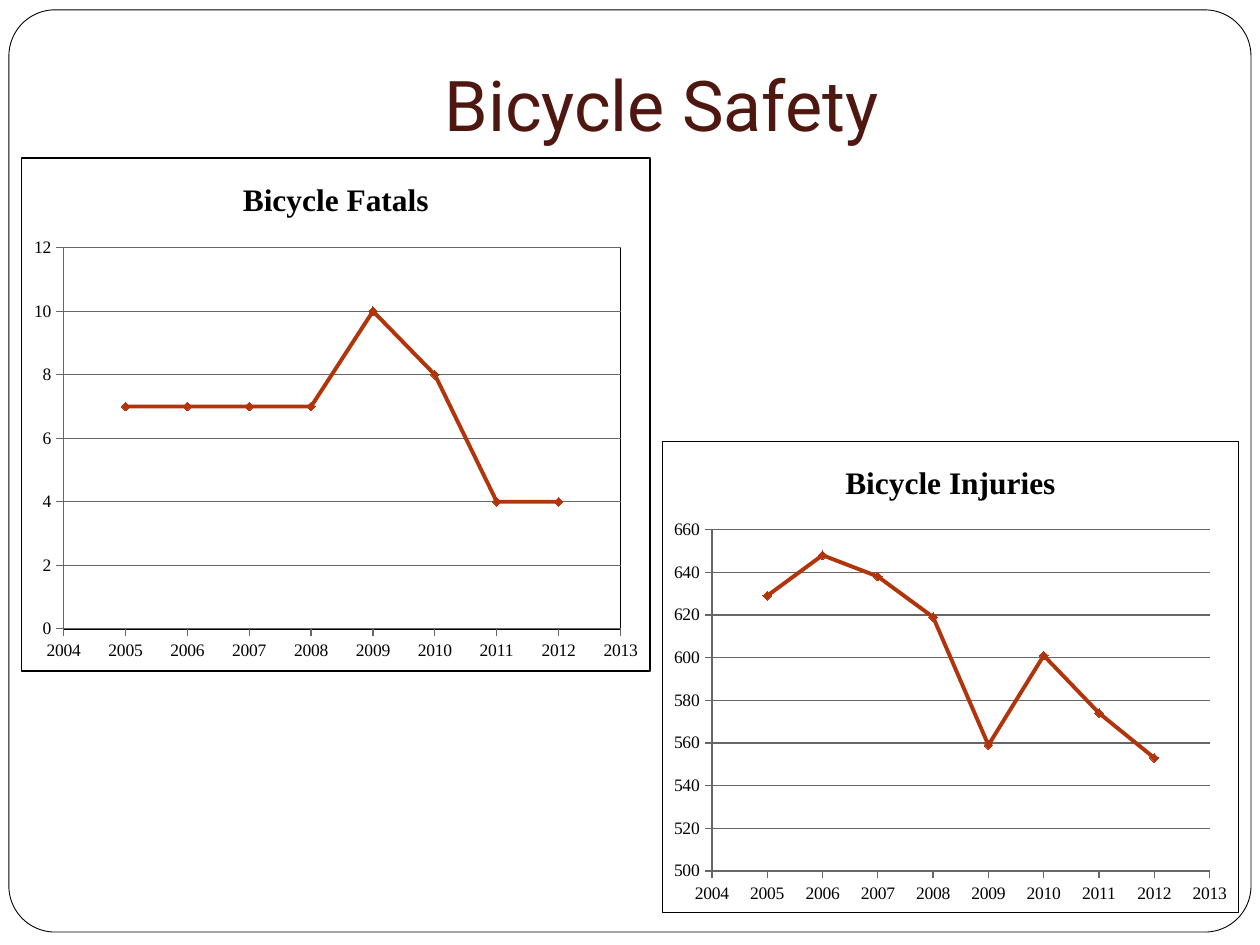
from lxml import etree
from pptx import Presentation
from pptx import util as u
from pptx.chart.data import XyChartData
from pptx.dml.color import RGBColor
from pptx.enum import chart as charts, shapes, text
from pptx.oxml import parse_xml
from pptx.oxml.ns import nsdecls, qn

COLORS = {"paper": "FFFFFF", "ink": "000000", "title": "4E1710",
          "curve": "B1340A", "grid": "666666"}
SERIF = "Times New Roman"
YEARS = range(2005, 2013)
CHARTS = [
    {"title": "Bicycle Fatals", "values": [7, 7, 7, 7, 10, 8, 4, 4],
     "box": (0.42, 3.17, 12.7, 10.37), "scale": (0, 12, 2),
     "plot": (0.067, 0.175, 0.886, 0.743), "plot_border": True},
    {"title": "Bicycle Injuries", "values": [629, 648, 638, 619, 559, 601, 574, 553],
     "box": (13.34, 8.89, 11.64, 9.52), "scale": (500, 660, 20),
     "plot": (0.086, 0.187, 0.864, 0.725), "plot_border": False},
]


def color(name):
    return RGBColor.from_string(COLORS[name])


def box(lengths):
    return [u.Cm(length) for length in lengths]


def set_line(line, name, width):
    line.color.rgb = color(name)
    line.width = u.Pt(width)


def write(frame, content, size, font, ink, bold=False):
    paragraph = frame.paragraphs[0]
    paragraph.alignment = text.PP_ALIGN.CENTER
    run = paragraph.add_run()
    run.text = content
    run.font.size = u.Pt(size)
    run.font.name = font
    run.font.bold = bold
    run.font.color.rgb = color(ink)


def outline():
    return parse_xml(
        f'<c:spPr {nsdecls("c", "a")}><a:noFill/><a:ln w="9525"><a:solidFill>'
        f'<a:srgbClr val="{COLORS["ink"]}"/></a:solidFill></a:ln></c:spPr>')


def place_plot(chart, fractions):
    plot_area = chart._chartSpace.chart.plotArea
    for old in plot_area.findall(qn("c:layout")):
        plot_area.remove(old)
    layout = parse_xml(f'<c:layout {nsdecls("c")}><c:manualLayout/></c:layout>')
    settings = [("layoutTarget", "inner"), ("xMode", "edge"), ("yMode", "edge")]
    settings += zip("xywh", fractions)
    for tag, value in settings:
        etree.SubElement(layout[0], qn(f"c:{tag}")).set("val", str(value))
    plot_area.insert(0, layout)


def format_axis(axis, scale):
    axis.minimum_scale, axis.maximum_scale, axis.major_unit = scale
    axis.major_tick_mark = charts.XL_TICK_MARK.OUTSIDE
    axis.minor_tick_mark = charts.XL_TICK_MARK.NONE
    axis.tick_labels.number_format = "General"
    axis.tick_labels.number_format_is_linked = False
    set_line(axis.format.line, "grid", 0.75)


def add_scatter(slide, item):
    data = XyChartData()
    points = data.add_series("Series 1")
    for year, value in zip(YEARS, item["values"]):
        points.add_data_point(year, value)
    chart = slide.shapes.add_chart(
        charts.XL_CHART_TYPE.XY_SCATTER_SMOOTH, *box(item["box"]), data).chart
    chart.has_legend = False
    chart.font.size = u.Pt(10)
    chart.font.name = SERIF
    chart.font.color.rgb = color("ink")
    chart.has_title = True
    write(chart.chart_title.text_frame, item["title"], 18, SERIF, "ink", bold=True)
    chart.chart_title.include_in_layout = False

    format_axis(chart.category_axis, (2004, 2013, 1))
    format_axis(chart.value_axis, item["scale"])
    chart.category_axis.has_major_gridlines = False
    chart.value_axis.has_major_gridlines = True
    set_line(chart.value_axis.major_gridlines.format.line, "grid", 0.75)

    plot = chart.plots[0]
    plot.vary_by_categories = False
    series = plot.series[0]
    series.smooth = True
    set_line(series.format.line, "curve", 2.25)
    series.marker.style = charts.XL_MARKER_STYLE.DIAMOND
    series.marker.size = 5
    series.marker.format.fill.solid()
    series.marker.format.fill.fore_color.rgb = color("curve")
    set_line(series.marker.format.line, "curve", 0.75)

    place_plot(chart, item["plot"])
    chart._chartSpace.chart.addnext(outline())
    if item["plot_border"]:
        chart._chartSpace.chart.plotArea.append(outline())


def main():
    presentation = Presentation()
    presentation.slide_width = u.Cm(25.4)
    presentation.slide_height = u.Cm(19.05)
    slide = presentation.slides.add_slide(presentation.slide_layouts[6])

    frame = slide.shapes.add_shape(
        shapes.MSO_SHAPE.ROUNDED_RECTANGLE, *box((0.18, 0.2, 25.04, 18.59)))
    frame.adjustments[0] = 0.05
    frame.shadow.inherit = False
    frame.fill.solid()
    frame.fill.fore_color.rgb = color("paper")
    set_line(frame.line, "ink", 0.5)

    title = slide.shapes.add_textbox(*box((2.54, 0, 21.59, 3.18))).text_frame
    title.word_wrap = True
    title.vertical_anchor = text.MSO_ANCHOR.BOTTOM
    title.margin_bottom = u.Cm(0.25)
    write(title, "Bicycle Safety", 40, "Roboto", "title")

    for item in CHARTS:
        add_scatter(slide, item)
    presentation.save("out.pptx")


if __name__ == "__main__":
    main()
